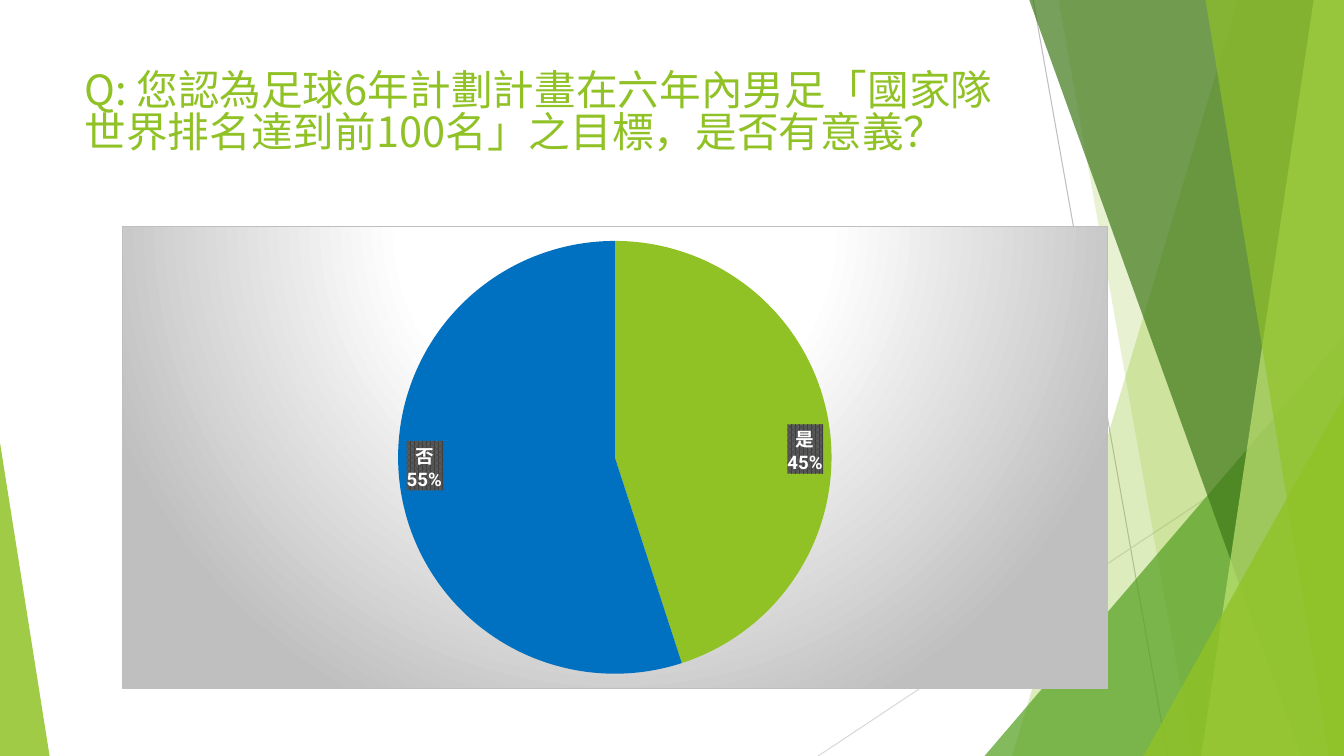
"""Build a survey slide: a two-line question above a pie chart, framed by green facets."""
from dataclasses import dataclass

import pptx
import pptx.chart.chart
import pptx.chart.data
import pptx.dml.color
import pptx.dml.fill
import pptx.enum.chart
import pptx.enum.shapes
import pptx.enum.text
import pptx.oxml
import pptx.oxml.ns
import pptx.shapes.base
import pptx.slide
import pptx.util

COLUMNS, ROWS = 160, 90
WIDTH, HEIGHT = pptx.util.Inches(13.33), pptx.util.Inches(7.5)


@dataclass(frozen=True)
class Theme:
    lime: str = "90C226"
    leaf: str = "54A021"
    forest: str = "3F7819"
    pale: str = "C0E474"
    blue: str = "0070C0"
    white: str = "FFFFFF"
    black: str = "000000"
    silver: str = "BFBFBF"
    mist: str = "D9D9D9"
    label_dark: str = "404040"
    label_light: str = "595959"
    question_font: str = "Noto Sans CJK SC"
    chart_font: str = "Roboto"
    question_size: float = 29.7
    chart_size: float = 10
    label_size: float = 13.3
    hairline: float = 0.75


@dataclass(frozen=True)
class Ray:
    start: tuple[float, float]
    end: tuple[float, float]
    color: str


@dataclass(frozen=True)
class Band:
    top_column: float
    bottom_column: float
    color: str
    opacity: int


@dataclass(frozen=True)
class Corner:
    left: float
    top: float
    width: float
    apex: float
    color: str
    opacity: int


@dataclass(frozen=True)
class Answer:
    wording: str
    percent: int
    color: str


THEME = Theme()
RAYS = [
    Ray((123, 0), (139, 90), THEME.silver),
    Ray((160, 48.4), (97.4, 90), THEME.mist),
]
FACETS: list[Band | Corner] = [
    Band(147.4, 120.5, THEME.lime, 30),
    Band(126, 142, THEME.lime, 20),
    Corner(117.2, 40, 42.8, 1, THEME.leaf, 72),
    Band(122.5, 154.9, THEME.forest, 70),
    Band(156.4, 143, THEME.pale, 70),
    Band(143.5, 158.2, THEME.lime, 65),
    Corner(136.1, 47.2, 23.9, 1, THEME.lime, 80),
    Corner(0, 52.7, 5.9, 0, THEME.lime, 85),
]
QUESTION = "Q: 您認為足球6年計劃計畫在六年內男足「國家隊世界排名達到前100名」之目標，是否有意義？"
ANSWERS = [Answer("是", 45, THEME.lime), Answer("否", 55, THEME.blue)]


def col(count: float) -> int:
    return round(WIDTH * count / COLUMNS)


def row(count: float) -> int:
    return round(HEIGHT * count / ROWS)


def rgb(color: str) -> pptx.dml.color.RGBColor:
    return pptx.dml.color.RGBColor.from_string(color)


def paint(fill: pptx.dml.fill.FillFormat, color: str) -> None:
    fill.solid()
    fill.fore_color.rgb = rgb(color)


def element(xml: str):
    spaces = pptx.oxml.ns.nsdecls("a", "c")
    return pptx.oxml.parse_xml(xml.replace(">", f" {spaces}>", 1))


def draw_ray(slide: pptx.slide.Slide, ray: Ray) -> None:
    line = slide.shapes.add_connector(
        pptx.enum.shapes.MSO_CONNECTOR.STRAIGHT,
        col(ray.start[0]), row(ray.start[1]), col(ray.end[0]), row(ray.end[1]),
    )
    line.line.color.rgb = rgb(ray.color)
    line.line.width = pptx.util.Pt(THEME.hairline)
    line.element.xpath("p:spPr")[0].append(element("<a:effectLst></a:effectLst>"))


def outline_facet(slide: pptx.slide.Slide, facet: Band | Corner) -> pptx.shapes.base.BaseShape:
    if isinstance(facet, Corner):
        triangle = slide.shapes.add_shape(
            pptx.enum.shapes.MSO_SHAPE.ISOSCELES_TRIANGLE,
            col(facet.left), row(facet.top), col(facet.width), row(ROWS - facet.top),
        )
        triangle.adjustments[0] = facet.apex
        return triangle
    top = row(-0.1)
    outline = slide.shapes.build_freeform(col(facet.top_column), top, scale=1.0)
    outline.add_line_segments(
        [(WIDTH, top), (WIDTH, HEIGHT), (col(facet.bottom_column), HEIGHT)], close=True
    )
    return outline.convert_to_shape()


def draw_facet(slide: pptx.slide.Slide, facet: Band | Corner) -> None:
    shape = outline_facet(slide, facet)
    shape.shadow.inherit = False
    paint(shape.fill, facet.color)
    shape.line.fill.background()
    color = shape.element.xpath("p:spPr/a:solidFill/a:srgbClr")[0]
    color.append(element(f'<a:alpha val="{facet.opacity * 1000}"></a:alpha>'))


def write_question(slide: pptx.slide.Slide) -> None:
    frame = slide.shapes.add_textbox(col(8.9), row(8), col(112.8), row(17.3)).text_frame
    frame.word_wrap = True
    frame.vertical_anchor = pptx.enum.text.MSO_ANCHOR.TOP
    paragraph = frame.paragraphs[0]
    paragraph.line_spacing = 0.84
    run = paragraph.add_run()
    run.text = QUESTION
    run.font.name = THEME.question_font
    run.font.size = pptx.util.Pt(THEME.question_size)
    run.font.color.rgb = rgb(THEME.lime)
    latin = run.font._element.xpath("a:latin")[0]
    latin.addnext(element(f'<a:ea typeface="{THEME.question_font}"></a:ea>'))


def style_labels(chart: pptx.chart.chart.Chart) -> None:
    labels = chart.plots[0].series[0].data_labels
    labels.show_value = False
    labels.show_percentage = True
    labels.show_category_name = True
    labels.position = pptx.enum.chart.XL_LABEL_POSITION.INSIDE_END
    labels.font.name = THEME.chart_font
    labels.font.size = pptx.util.Pt(THEME.label_size)
    labels.font.bold = True
    labels.font.color.rgb = rgb(THEME.white)
    node = chart.element.xpath(".//c:ser/c:dLbls")[0]
    node.xpath("c:txPr")[0].addprevious(element(
        '<c:spPr><a:pattFill prst="pct75">'
        f'<a:fgClr><a:srgbClr val="{THEME.label_dark}"/></a:fgClr>'
        f'<a:bgClr><a:srgbClr val="{THEME.label_light}"/></a:bgClr>'
        "</a:pattFill><a:ln><a:noFill/></a:ln></c:spPr>"
    ))
    flag = (node.xpath("c:showBubbleSize") or node.xpath("c:showPercent"))[0]
    flag.addnext(element("<c:separator>\n</c:separator>"))


def style_backdrop(chart: pptx.chart.chart.Chart) -> None:
    stops = "".join(
        f'<a:gs pos="{share * 1000}"><a:srgbClr val="{color}"/></a:gs>'
        for share, color in [(0, THEME.white), (39, THEME.white), (100, THEME.silver)]
    )
    chart.element.xpath("c:chart")[0].addnext(element(
        f"<c:spPr><a:gradFill><a:gsLst>{stops}</a:gsLst>"
        '<a:path path="circle"><a:fillToRect l="50000" t="-80000" r="50000" b="180000"/></a:path>'
        f'</a:gradFill><a:ln w="{pptx.util.Pt(THEME.hairline)}"><a:solidFill>'
        f'<a:srgbClr val="{THEME.silver}"/></a:solidFill></a:ln></c:spPr>'
    ))
    plot_area = chart.element.xpath("c:chart/c:plotArea")[0]
    for layout in plot_area.xpath("c:layout"):
        plot_area.remove(layout)
    shares = "".join(
        f'<c:{side} val="{share}"/>'
        for side, share in [("x", 0.28), ("y", 0.03), ("w", 0.44), ("h", 0.94)]
    )
    plot_area.insert(0, element(
        '<c:layout><c:manualLayout><c:layoutTarget val="inner"/>'
        f'<c:xMode val="edge"/><c:yMode val="edge"/>{shares}</c:manualLayout></c:layout>'
    ))


def draw_answers(slide: pptx.slide.Slide) -> None:
    data = pptx.chart.data.CategoryChartData()
    data.categories = [answer.wording for answer in ANSWERS]
    data.add_series("Series 1", [answer.percent for answer in ANSWERS])
    chart = slide.shapes.add_chart(
        pptx.enum.chart.XL_CHART_TYPE.PIE, col(14.5), row(26.9), col(117.4), row(55.1), data
    ).chart
    chart.has_title = False
    chart.has_legend = False
    chart.font.name = THEME.chart_font
    chart.font.size = pptx.util.Pt(THEME.chart_size)
    chart.font.color.rgb = rgb(THEME.black)
    chart.plots[0].vary_by_categories = True
    for index, answer in enumerate(ANSWERS):
        paint(chart.plots[0].series[0].points[index].format.fill, answer.color)
    style_labels(chart)
    style_backdrop(chart)


def main() -> None:
    deck = pptx.Presentation()
    deck.slide_width, deck.slide_height = WIDTH, HEIGHT
    slide = deck.slides.add_slide(deck.slide_layouts[6])
    paint(slide.background.fill, THEME.white)
    for ray in RAYS:
        draw_ray(slide, ray)
    for facet in FACETS:
        draw_facet(slide, facet)
    write_question(slide)
    draw_answers(slide)
    deck.save("out.pptx")


if __name__ == "__main__":
    main()
